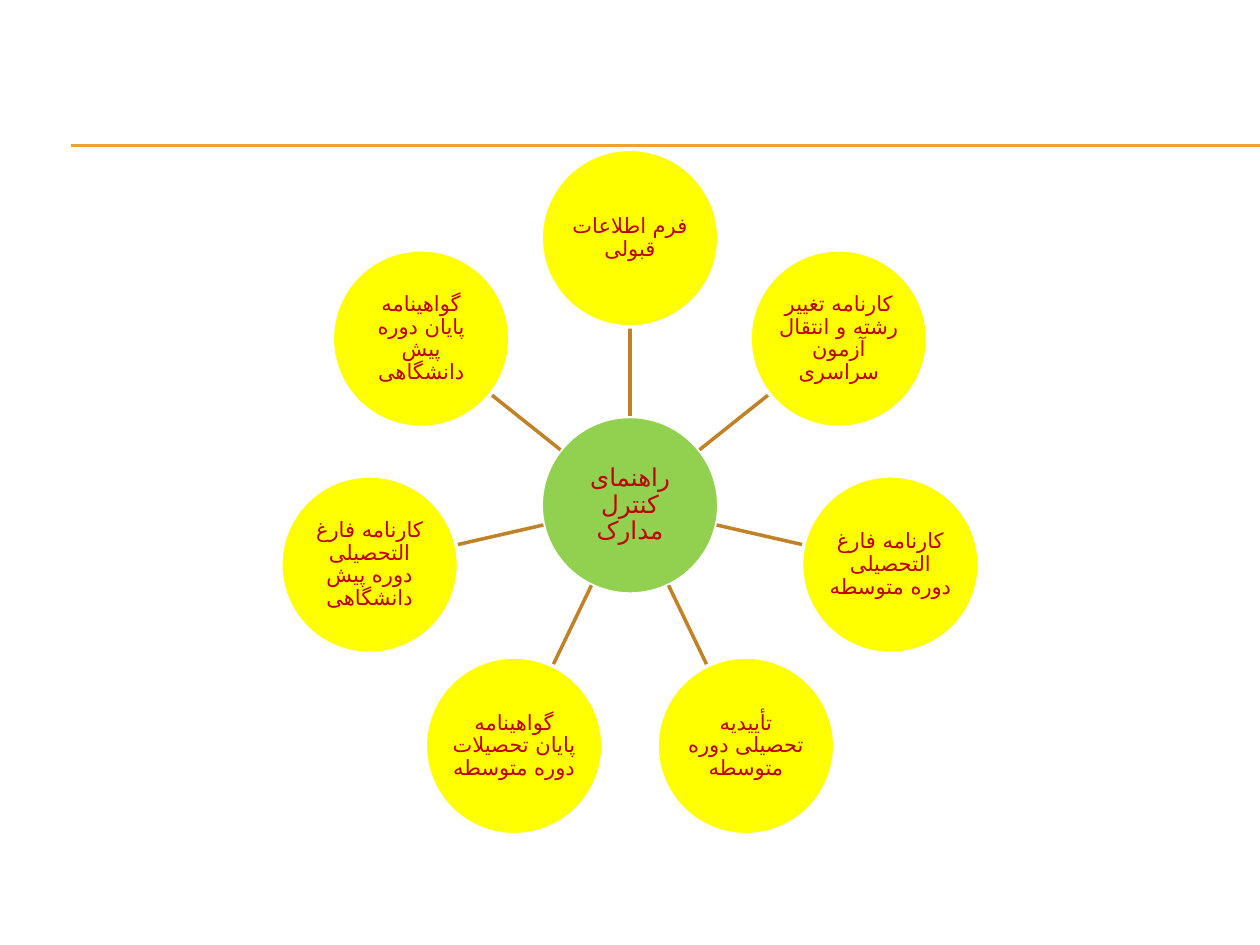
import math

from lxml import etree
from pptx import Presentation
from pptx.dml.color import RGBColor
from pptx.enum import shapes, text
from pptx.oxml import ns
from pptx.util import Inches, Pt

WHITE = RGBColor(0xFF, 0xFF, 0xFF)
GREEN = RGBColor(0x92, 0xD0, 0x50)
YELLOW = RGBColor(0xFF, 0xFF, 0x00)
RED = RGBColor(0xC0, 0x00, 0x00)
BROWN = RGBColor(0xC0, 0x82, 0x25)
ORANGE = RGBColor(0xF0, 0xA2, 0x2E)

FONT = "Karla"
ARABIC_FONT = "DejaVu Sans"
CENTER_X, CENTER_Y = 5, 4.01
DIAMETER = 1.41
ORBIT = 2.12

HUB = "راهنمای کنترل مدارک"
DOCUMENTS = [
    "فرم اطلاعات قبولی",
    "کارنامه تغییر رشته و انتقال آزمون سراسری",
    "کارنامه فارغ التحصیلی دوره متوسطه",
    "تأییدیه تحصیلی دوره متوسطه",
    "گواهینامه پایان تحصیلات دوره متوسطه",
    "کارنامه فارغ التحصیلی دوره پیش دانشگاهی",
    "گواهینامه پایان دوره پیش دانشگاهی",
]


def polar(radius, angle):
    """Return the point at a clockwise angle from the top of the hub."""
    return CENTER_X + radius * math.sin(angle), CENTER_Y - radius * math.cos(angle)


def add_line(page, start, end, color, width):
    """Draw a straight line without shadow between two points in inches."""
    line = page.shapes.add_connector(
        shapes.MSO_CONNECTOR.STRAIGHT, *map(Inches, (*start, *end)))
    line.line.color.rgb = color
    line.line.width = Pt(width)
    etree.SubElement(line._element.spPr, ns.qn("a:effectLst"))


def add_circle(page, center, words, fill, size):
    """Draw a filled circle with centred right-to-left text."""
    left, top = (value - DIAMETER / 2 for value in center)
    circle = page.shapes.add_shape(
        shapes.MSO_SHAPE.OVAL, *map(Inches, (left, top, DIAMETER, DIAMETER)))
    circle.shadow.inherit = False
    circle.fill.solid()
    circle.fill.fore_color.rgb = fill
    circle.line.color.rgb = WHITE
    circle.line.width = Pt(2)
    frame = circle.text_frame
    frame.word_wrap = True
    frame.vertical_anchor = text.MSO_ANCHOR.MIDDLE
    frame.margin_left = frame.margin_right = Inches(0.01)
    frame.margin_top = frame.margin_bottom = Inches(0.01)
    paragraph = frame.paragraphs[0]
    paragraph.text = words
    paragraph.alignment = text.PP_ALIGN.CENTER
    paragraph.line_spacing = 0.9
    paragraph._p.get_or_add_pPr().set("rtl", "1")
    font = paragraph.font
    font.name = FONT
    font.size = Pt(size)
    font.color.rgb = RED
    etree.SubElement(font._element, ns.qn("a:cs"), typeface=ARABIC_FONT)


def main():
    """Build the slide with a hub and its ring of documents."""
    deck = Presentation()
    deck.slide_width, deck.slide_height = Inches(10), Inches(7.5)
    page = deck.slides.add_slide(deck.slide_layouts[6])
    for height in (1.15, 1.16):
        add_line(page, (0.56, height), (10, height), ORANGE, 0.75)
    add_circle(page, (CENTER_X, CENTER_Y), HUB, GREEN, 14)
    for index, words in enumerate(DOCUMENTS):
        angle = math.tau * index / len(DOCUMENTS)
        add_line(page, polar(DIAMETER / 2, angle),
                 polar(ORBIT - DIAMETER / 2, angle), BROWN, 2)
        add_circle(page, polar(ORBIT, angle), words, YELLOW, 12)
    deck.save("out.pptx")


if __name__ == "__main__":
    main()
